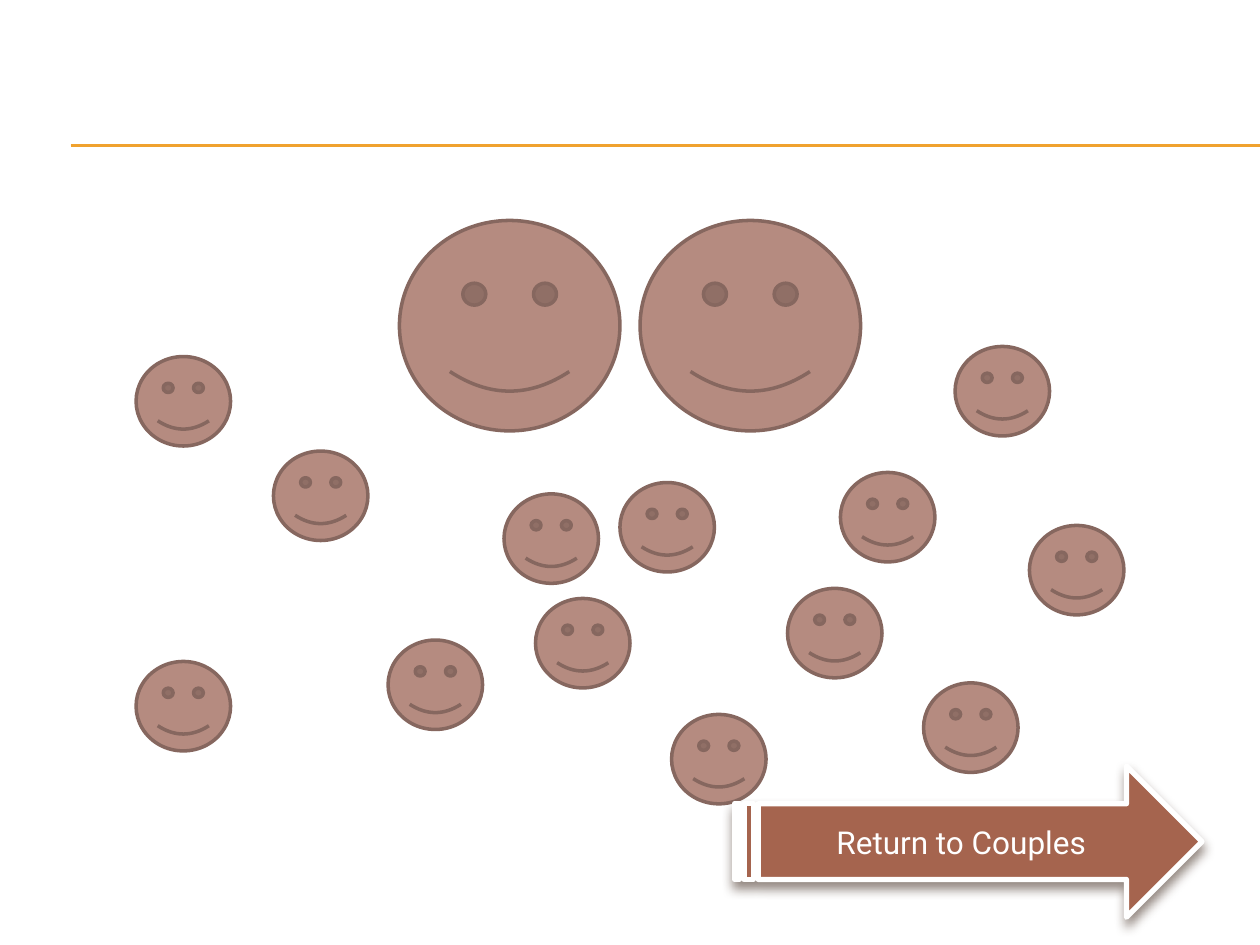
from typing import NamedTuple

import lxml.etree
import pptx
import pptx.dml.color
import pptx.enum.shapes
import pptx.enum.text
import pptx.oxml.ns
import pptx.util

Inches = pptx.util.Inches
Pt = pptx.util.Pt
SHAPE = pptx.enum.shapes.MSO_SHAPE
qn = pptx.oxml.ns.qn

COLORS = {
    "rule": "F0A22E",
    "face": "B58B80",
    "face_line": "86675F",
    "arrow": "A5644E",
    "white": "FFFFFF",
    "shadow": "4E3B30",
}


class Size(NamedTuple):
    width: float
    height: float


class Face(NamedTuple):
    left: float
    top: float
    size: Size


LARGE = Size(1.75, 1.67)
SMALL = Size(0.75, 0.71)

# The couple in front of the crowd, listed from back to front
FACES = [
    Face(4, 3.92, SMALL),
    Face(7.58, 2.75, SMALL),
    Face(8.17, 4.17, SMALL),
    Face(6.67, 3.75, SMALL),
    Face(7.33, 5.42, SMALL),
    Face(1.08, 2.83, SMALL),
    Face(3.08, 5.08, SMALL),
    Face(2.17, 3.58, SMALL),
    Face(3.17, 1.75, LARGE),
    Face(5.08, 1.75, LARGE),
    Face(4.92, 3.83, SMALL),
    Face(5.33, 5.67, SMALL),
    Face(1.08, 5.25, SMALL),
    Face(6.25, 4.67, SMALL),
    Face(4.25, 4.75, SMALL),
]


def rgb(name: str) -> pptx.dml.color.RGBColor:
    return pptx.dml.color.RGBColor.from_string(COLORS[name])


def add_rule(s, y: float) -> None:
    line = s.shapes.add_connector(
        pptx.enum.shapes.MSO_CONNECTOR.STRAIGHT,
        Inches(0.56), Inches(y), Inches(10), Inches(y))
    line.line.color.rgb = rgb("rule")
    line.line.width = Pt(0.75)
    lxml.etree.SubElement(line._element.spPr, qn("a:effectLst"))


def add_shape(s, kind, left: float, top: float, size: Size,
              fill: str, line: str, weight: float):
    sp = s.shapes.add_shape(kind, Inches(left), Inches(top),
                            Inches(size.width), Inches(size.height))
    sp.shadow.inherit = False
    sp.fill.solid()
    sp.fill.fore_color.rgb = rgb(fill)
    sp.line.color.rgb = rgb(line)
    sp.line.width = Pt(weight)
    return sp


def add_drop_shadow(sp, blur: float, distance: float, opacity: int) -> None:
    effects = sp._element.spPr.find(qn("a:effectLst"))
    shadow = lxml.etree.SubElement(
        effects, qn("a:outerShdw"), blurRad=str(Pt(blur)),
        dist=str(Pt(distance)), dir="5400000", rotWithShape="0")
    color = lxml.etree.SubElement(shadow, qn("a:srgbClr"), val=COLORS["shadow"])
    lxml.etree.SubElement(color, qn("a:alpha"), val=str(opacity * 1000))


def add_return_arrow(s, text: str) -> None:
    sp = add_shape(s, SHAPE.STRIPED_RIGHT_ARROW, 5.83, 6.08, Size(3.71, 1.2),
                   "arrow", "white", 3)
    add_drop_shadow(sp, blur=6, distance=4, opacity=60)
    tf = sp.text_frame
    tf.text = text
    tf.word_wrap = True
    tf.vertical_anchor = pptx.enum.text.MSO_ANCHOR.MIDDLE
    p = tf.paragraphs[0]
    p.alignment = pptx.enum.text.PP_ALIGN.CENTER
    r = p.runs[0]
    r.font.name = "Roboto"
    r.font.size = Pt(18)
    r.font.color.rgb = rgb("white")


def main() -> None:
    prs = pptx.Presentation()
    prs.slide_width, prs.slide_height = Inches(10), Inches(7.5)
    s = prs.slides.add_slide(prs.slide_layouts[6])

    # Double rule under the title area
    for y in (1.15, 1.16):
        add_rule(s, y)

    # Smiling faces
    for face in FACES:
        add_shape(s, SHAPE.SMILEY_FACE, face.left, face.top, face.size,
                  "face", "face_line", 2)

    # Navigation arrow
    add_return_arrow(s, "Return to Couples")

    prs.save("out.pptx")


if __name__ == "__main__":
    main()
